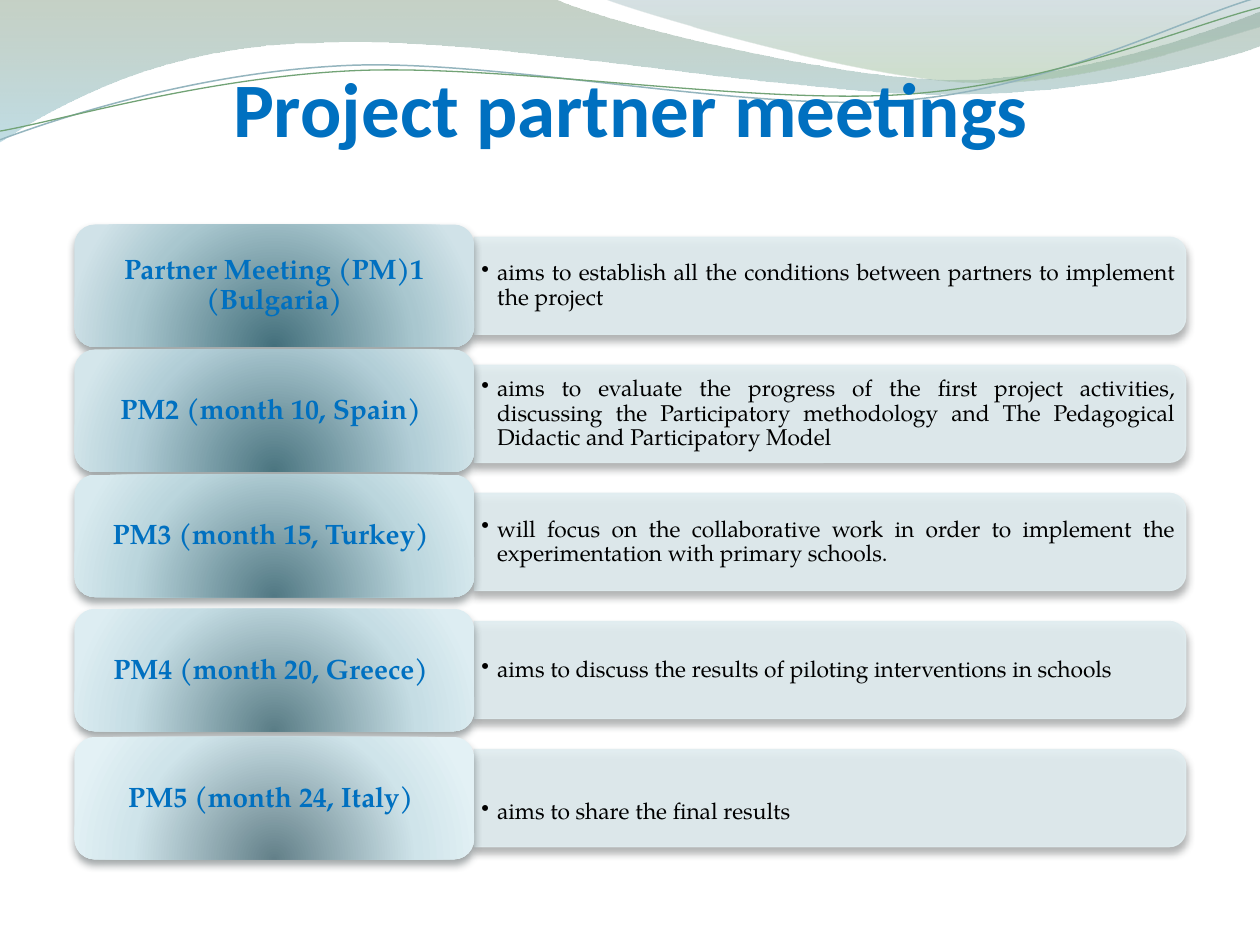
from lxml import etree
from pptx import Presentation
from pptx.dml.color import RGBColor
from pptx.enum.shapes import MSO_SHAPE
from pptx.enum.text import MSO_ANCHOR, PP_ALIGN
from pptx.oxml import parse_xml
from pptx.oxml.ns import nsdecls, qn
from pptx.util import Pt

ROUNDED = MSO_SHAPE.ROUNDED_RECTANGLE
ROUNDED_TOP = MSO_SHAPE.ROUND_2_SAME_RECTANGLE
MIDDLE, BOTTOM = MSO_ANCHOR.MIDDLE, MSO_ANCHOR.BOTTOM
CENTER, JUSTIFY = PP_ALIGN.CENTER, PP_ALIGN.JUSTIFY
TITLE_ONLY = 5

BLUE = RGBColor(0x00, 0x70, 0xC0)
BLACK = RGBColor(0x00, 0x00, 0x00)
PANEL = RGBColor(0xE1, 0xED, 0xF0)
PANEL_SHADOW = RGBColor(0x4F, 0x53, 0x54)
LABEL_SHADOW = RGBColor(0x3D, 0x48, 0x4B)
SAGE = RGBColor(0x80, 0x99, 0x80)
AQUA = RGBColor(0x8D, 0xC1, 0xCF)
SLATE = RGBColor(0x77, 0x9B, 0xA4)
LEAF = RGBColor(0x96, 0xB9, 0x96)
LINE_BLUE = RGBColor(0x94, 0xB5, 0xBE)
LINE_GREEN = RGBColor(0x72, 0xA3, 0x76)
BODY_FONT = "TeX Gyre Pagella"

# Label, its shift from the row's middle, gradient colours, aim, extra top inset
MEETINGS = [
    ("Partner Meeting (PM)1 (Bulgaria)", 0, ("44707C", "A9C7CF", "D0E2E8"),
     "aims to establish all the conditions between partners to implement the project", 0),
    ("PM2 (month 10, Spain) ", -1.8, ("4B7580", "B2CED7", "D4E6EB"),
     "aims to evaluate the progress of the first project activities, discussing the "
     "Participatory methodology and The Pedagogical Didactic and Participatory Model", 0),
    ("PM3 (month 15, Turkey) ", -3.5, ("527984", "BBD6DD", "D8EAEF"),
     "will focus on the collaborative work in order to implement the experimentation "
     "with primary schools.", 0),
    ("PM4 (month 20, Greece) ", 0, ("5A7D86", "C5DDE4", "DDEDF2"),
     "aims to discuss the results of piloting interventions in schools", 0),
    ("PM5 (month 24, Italy) ", 0, ("638089", "CFE4EA", "E3F1F5"),
     "aims to share the final results", 16),
]

# Each wave is a start point and steps: one point is a line, three are a curve
BROAD_WAVE = [
    (0, -0.7), [(316.8, -0.7)],
    [(342.7, 12.2), (478.1, 45.4), (545.8, 45.4)],
    [(614.2, 45.4), (689.8, 18.7), (720, 6.5)],
    [(720.7, 25.9)],
    [(707.8, 31.7), (626.4, 54.7), (537.1, 54)],
    [(447.8, 54), (275, 20.2), (185, 24.5)],
    [(92.9, 25.2), (33.1, 59.8), (-0.7, 81.4)],
]
RIGHT_WAVE = [
    (344.9, -0.7),
    [(366.5, 7.9), (491, 44.6), (553.7, 46.8)],
    [(616.3, 49.7), (691.9, 23), (720, 15.1)],
    [(720, 0)],
]
BLUE_STRAND = [
    (0, 79.9),
    [(34.6, 67), (113.8, 41), (199.4, 37.4)],
    [(284.4, 33.8), (427, 64.1), (513.4, 57.6)],
    [(599.8, 51.1), (675.4, 10.8), (718.6, -1.4)],
]
GREEN_STRAND = [
    (0, 74.9),
    [(33.8, 69.1), (118.1, 43.9), (203.8, 40.3)],
    [(290.2, 36.7), (429.8, 59.8), (516.2, 54)],
    [(601.9, 48.2), (677.5, 15.1), (720, 4.3)],
]


def set_gradient(shape, stops, direction):
    """Fill with (position, colour, opacity) stops, all in percent."""
    stop_xml = "".join(
        f'<a:gs pos="{position * 1000}"><a:srgbClr val="{color}">'
        f'<a:alpha val="{opacity * 1000}"/></a:srgbClr></a:gs>'
        for position, color, opacity in stops)
    gradient = parse_xml(f'<a:gradFill {nsdecls("a")} rotWithShape="1">'
                         f'<a:gsLst>{stop_xml}</a:gsLst>{direction}</a:gradFill>')
    shape.fill.background()
    properties = shape.element.spPr
    properties.replace(properties.find(qn("a:noFill")), gradient)


def add_shadow(shape, color):
    shape.shadow.inherit = False
    shape.element.spPr.find(qn("a:effectLst")).append(parse_xml(
        f'<a:outerShdw {nsdecls("a")} blurRad="{Pt(4.5)}" dist="{Pt(3)}" dir="5400000" '
        f'rotWithShape="0"><a:srgbClr val="{color}"><a:alpha val="48000"/></a:srgbClr>'
        '</a:outerShdw>'))


def add_wave(page, outline, closed):
    """Draw the outline through all its points, then bend each triple into a curve."""
    start, *steps = outline
    points = [(Pt(x), Pt(y)) for step in steps for x, y in step]
    builder = page.shapes.build_freeform(Pt(start[0]), Pt(start[1]), scale=1.0)
    builder.add_line_segments(points, close=closed)
    wave = builder.convert_to_shape()
    wave.shadow.inherit = False
    segments = iter(list(wave.element.spPr.iter(qn("a:lnTo"))))
    for step in steps:
        first, *others = [next(segments) for _ in step]
        if others:
            first.tag = qn("a:cubicBezTo")
            for segment in others:
                first.append(segment[0])
                segment.getparent().remove(segment)
    return wave


def add_header_waves(page):
    """Draw the waves and move them to the master, behind its placeholders."""
    waves = []
    for outline, stops in (
            (BROAD_WAVE, [(0, SAGE, 45), (100, AQUA, 55)]),
            (RIGHT_WAVE, [(0, SLATE, 30), (80, LEAF, 45)])):
        wave = add_wave(page, outline, True)
        set_gradient(wave, stops, '<a:lin ang="5400000" scaled="0"/>')
        wave.line.fill.background()
        waves.append(wave)
    for outline, color, width in ((BLUE_STRAND, LINE_BLUE, 0.85),
                                  (GREEN_STRAND, LINE_GREEN, 0.75)):
        strand = add_wave(page, outline, False)
        strand.fill.background()
        strand.line.color.rgb = color
        strand.line.width = Pt(width)
        waves.append(strand)
    front = page.slide_layout.slide_master.placeholders[0].element
    for number, wave in enumerate(waves, start=20):
        wave.element.nvSpPr.cNvPr.set("id", str(number))
        front.addprevious(wave.element)


def write(shape, text, font_name, size, color, bold, align, anchor, insets):
    frame = shape.text_frame
    frame.word_wrap = True
    frame.vertical_anchor = anchor
    (frame.margin_left, frame.margin_top,
     frame.margin_right, frame.margin_bottom) = map(Pt, insets)
    frame.text = text
    para = frame.paragraphs[0]
    para.alignment = align
    font = para.runs[0].font
    font.name, font.size, font.bold = font_name, Pt(size), bold
    font.color.rgb = color
    return para


def add_title(page, left, top, width, height):
    title = page.shapes.title
    title.left, title.top, title.width, title.height = map(Pt, (left, top, width, height))
    write(title, "Project partner meetings", "Calibri", 44, BLUE, True,
          CENTER, BOTTOM, (0, 3.6, 0, 0))


def add_aim(page, text, extra_top, left, middle, width, height):
    # A quarter turn puts the two rounded corners on the right
    panel = page.shapes.add_shape(
        ROUNDED_TOP, Pt(left + (width - height) / 2), Pt(middle - width / 2),
        Pt(height), Pt(width))
    panel.rotation = 90
    panel.fill.solid()
    panel.fill.fore_color.rgb = PANEL
    panel.line.color.rgb = PANEL
    panel.line.width = Pt(0.75)
    for color in panel.element.spPr.iter(qn("a:srgbClr")):
        etree.SubElement(color, qn("a:alpha")).set("val", "90000")
    add_shadow(panel, PANEL_SHADOW)

    box = page.shapes.add_textbox(Pt(left), Pt(middle - 25), Pt(width - 2), Pt(50))
    para = write(box, text, BODY_FONT, 13, BLACK, False, JUSTIFY, MIDDLE,
                 (4.1, 2 + extra_top, 4.5, 2))
    para.line_spacing = 0.9
    properties = para._p.get_or_add_pPr()
    properties.set("marL", str(Pt(9)))
    properties.set("indent", str(Pt(-9)))
    etree.SubElement(properties, qn("a:buChar")).set("char", "•")
    para.font.size = Pt(13)
    etree.SubElement(para._p, qn("a:endParaRPr")).set("sz", "1300")


def add_label(page, text, colors, left, middle, width, height):
    label = page.shapes.add_shape(ROUNDED, Pt(left), Pt(middle - height / 2),
                                  Pt(width), Pt(height))
    set_gradient(label, [(position, color, 100) for position, color in zip((0, 68, 100), colors)],
                 '<a:path path="circle"><a:fillToRect l="50000" t="130000" '
                 'r="50000" b="-30000"/></a:path>')
    label.line.fill.background()
    add_shadow(label, LABEL_SHADOW)
    margin = 3.4
    box = page.shapes.add_textbox(Pt(left + margin), Pt(middle - height / 2 + margin),
                                  Pt(width - 2 * margin), Pt(height - 2 * margin))
    para = write(box, text, BODY_FONT, 16, BLUE, True, CENTER, MIDDLE, (4.8, 2.4, 4.8, 2.4))
    para.line_spacing = 0.9


def add_meetings(page, left, top, width, height):
    pitch = height / len(MEETINGS)
    label_width = 228.5
    for index, (name, shift, colors, aim, extra_top) in enumerate(MEETINGS):
        middle = top + (index + 0.5) * pitch
        add_aim(page, aim, extra_top, left + label_width, middle, width - label_width, 55.5)
        add_label(page, name, colors, left, middle + shift, label_width, 70)


def main():
    deck = Presentation()
    deck.slide_width, deck.slide_height = Pt(720), Pt(540)
    page = deck.slides.add_slide(deck.slide_layouts[TITLE_ONLY])
    add_header_waves(page)
    add_title(page, 36.5, 26.4, 648, 61)
    add_meetings(page, 42.5, 126.7, 635, 366)
    deck.save("out.pptx")


if __name__ == "__main__":
    main()
